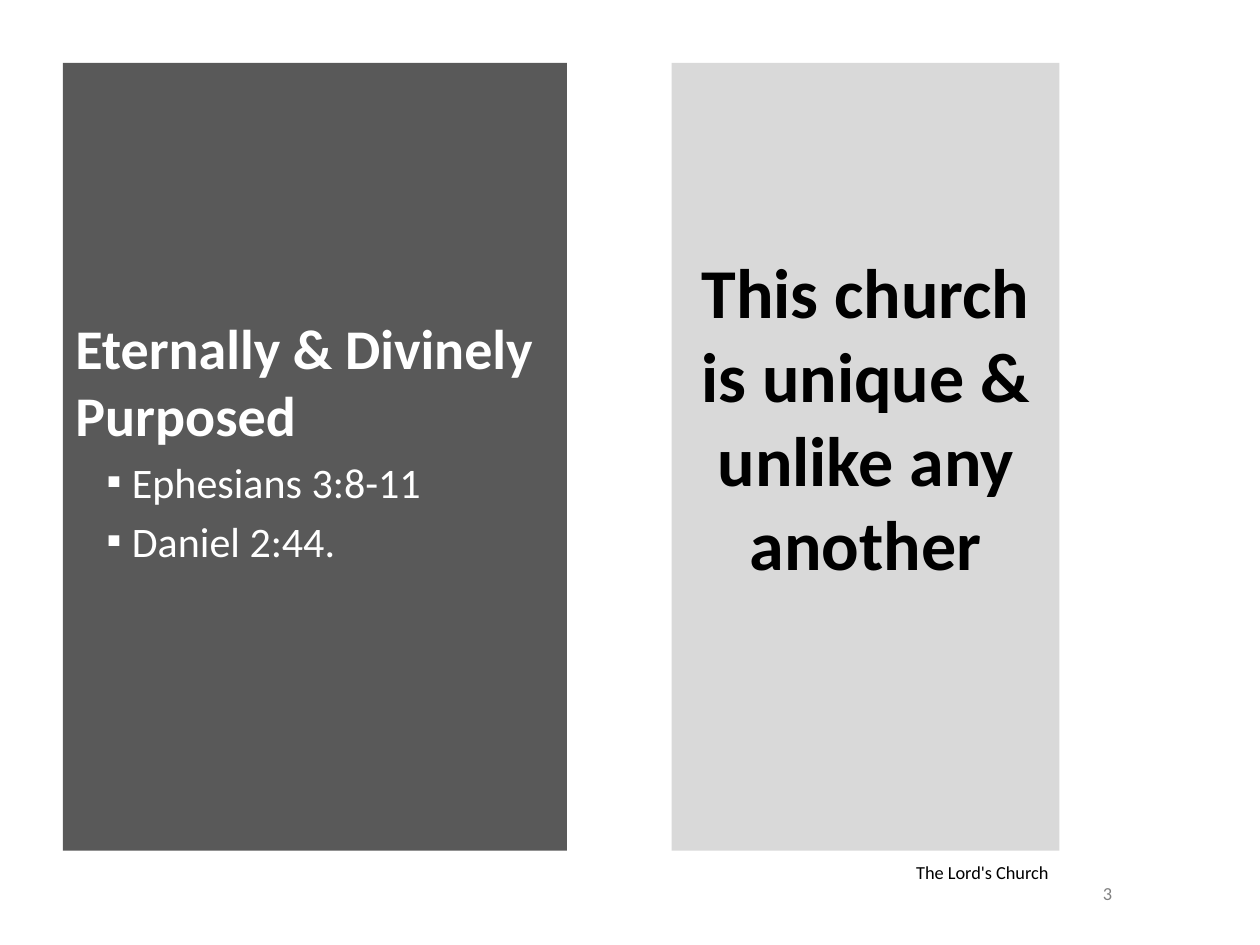
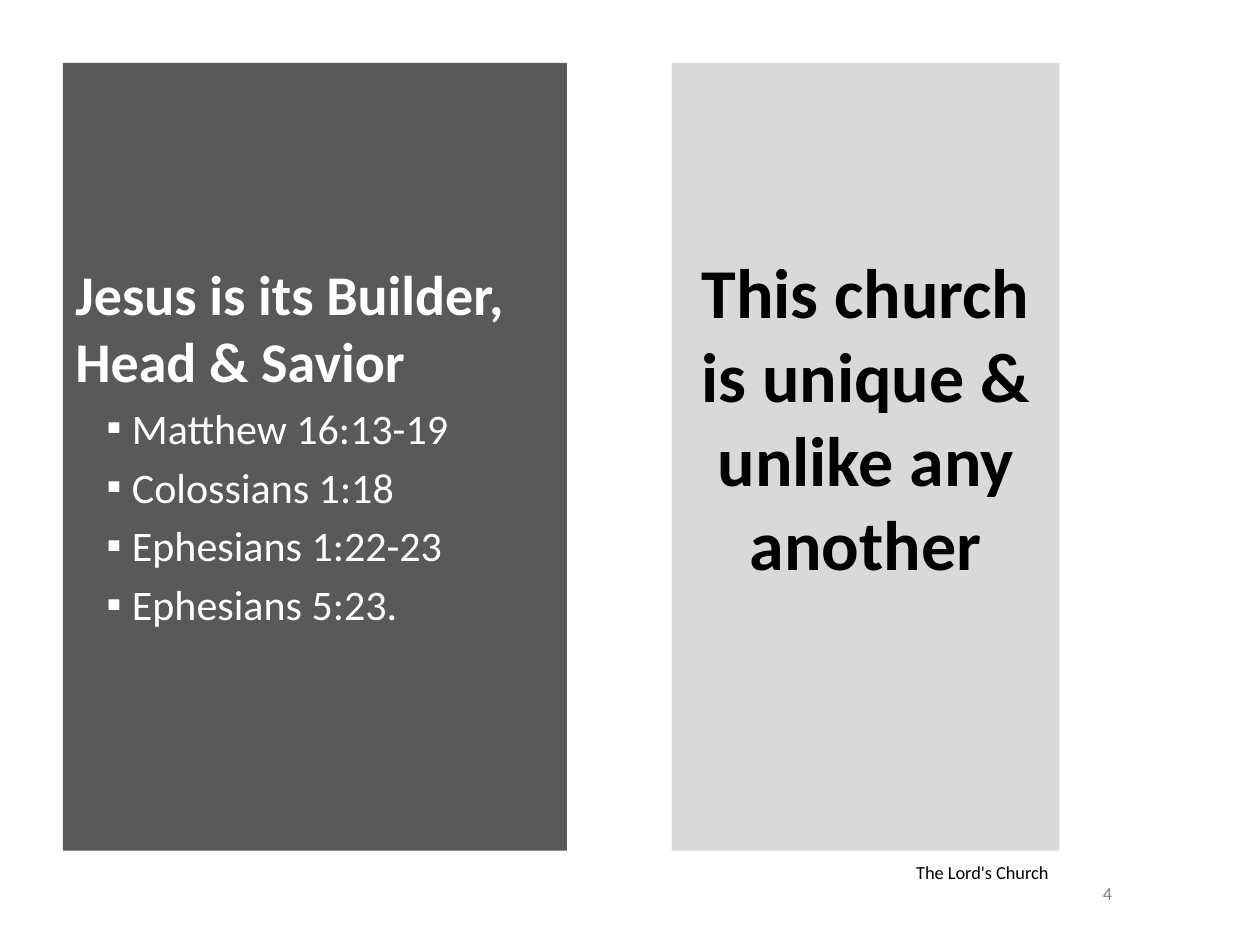
from dataclasses import dataclass

from lxml.etree import SubElement
from pptx import Presentation
from pptx.dml.color import RGBColor
from pptx.enum.shapes import MSO_SHAPE
from pptx.enum.text import MSO_ANCHOR, PP_ALIGN
from pptx.oxml.ns import qn
from pptx.util import Cm, Pt

FONT = "Calibri"
DARK, LIGHT = "595959", "D9D9D9"
WHITE, BLACK, GREY = "FFFFFF", "000000", "808080"
CLAIM = "This church is unique & unlike any another"
FOOTER = "The Lord's Church"


@dataclass
class Box:
    """Place of a shape, in centimetres."""
    left: float
    top: float
    width: float
    height: float


@dataclass
class Point:
    """Content of one slide, with the drop of its text in centimetres."""
    page: int
    head: str
    verses: list[str]
    drop: float


POINT = Box(1.27, 1.27, 10.16, 15.88)
TITLE = Box(13.54, 1.27, 7.82, 15.88)
PAGE = Box(21.59, 17.78, 1.47, 0.43)
FOOT = Box(13.54, 17.5, 7.85, 0.43)

POINTS = [
    Point(3, "Eternally & Divinely Purposed",
          ["Ephesians 3:8-11", "Daniel 2:44."], 5.05),
    Point(4, "Jesus is its Builder, Head & Savior",
          ["Matthew 16:13-19", "Colossians 1:18", "Ephesians 1:22-23",
           "Ephesians 5:23."], 3.96),
]


def paint(color, value: str) -> None:
    """Give a colour format its hex value."""
    color.rgb = RGBColor.from_string(value)


def place(box: Box) -> list:
    """Turn a box into slide lengths."""
    return [Cm(n) for n in (box.left, box.top, box.width, box.height)]


def setup(frame, anchor, drop: float = 0.13):
    """Set wrap, anchor and top inset of a text frame."""
    frame.word_wrap = True
    frame.vertical_anchor = anchor
    frame.margin_top = Cm(drop)
    return frame


def panel(slide, box: Box, fill: str, drop: float):
    """Draw a filled panel and return its text frame."""
    shape = slide.shapes.add_shape(MSO_SHAPE.RECTANGLE, *place(box))
    shape.shadow.inherit = False
    shape.fill.solid()
    paint(shape.fill.fore_color, fill)
    shape.line.fill.background()
    return setup(shape.text_frame, MSO_ANCHOR.TOP, drop)


def label(slide, box: Box, anchor):
    """Add a small text box and return its text frame."""
    return setup(slide.shapes.add_textbox(*place(box)).text_frame, anchor)


def write(frame, text: str, *, size: float, color: str, bold: bool = False,
          align=PP_ALIGN.LEFT, bullet: str = "") -> None:
    """Write one paragraph, reusing the first while it is empty."""
    para = frame.paragraphs[0] if not frame.text else frame.add_paragraph()
    para.alignment = align
    if bullet:
        para.level = 1
        para.space_before = Pt(size * 0.2)
        props = para._p.get_or_add_pPr()
        props.set("marL", str(Cm(1.14)))
        props.set("indent", str(Cm(-0.51)))
        tint = SubElement(props, qn("a:buClr"))
        SubElement(tint, qn("a:srgbClr"), val=color)
        SubElement(props, qn("a:buFont"), typeface=FONT)
        SubElement(props, qn("a:buChar"), char=bullet)
    run = para.add_run()
    run.text = text
    run.font.name = FONT
    run.font.size = Pt(size)
    run.font.bold = bold
    paint(run.font.color, color)


def draw(deck, point: Point) -> None:
    """Build one slide."""
    slide = deck.slides.add_slide(deck.slide_layouts[6])
    body = panel(slide, POINT, DARK, point.drop)
    write(body, point.head, size=32, color=WHITE, bold=True)
    for verse in point.verses:
        write(body, verse, size=24, color=WHITE, bullet="▪")
    write(panel(slide, TITLE, LIGHT, 3.75), CLAIM, size=40, color=BLACK,
          bold=True, align=PP_ALIGN.CENTER)
    write(label(slide, PAGE, MSO_ANCHOR.MIDDLE), str(point.page), size=10.5,
          color=GREY, align=PP_ALIGN.CENTER)
    write(label(slide, FOOT, MSO_ANCHOR.BOTTOM), FOOTER, size=10.5,
          color=BLACK, align=PP_ALIGN.RIGHT)


def main() -> None:
    """Build and save the deck."""
    deck = Presentation()
    deck.slide_width, deck.slide_height = Cm(25.4), Cm(19.05)
    for point in POINTS:
        draw(deck, point)
    deck.save("out.pptx")


if __name__ == "__main__":
    main()
